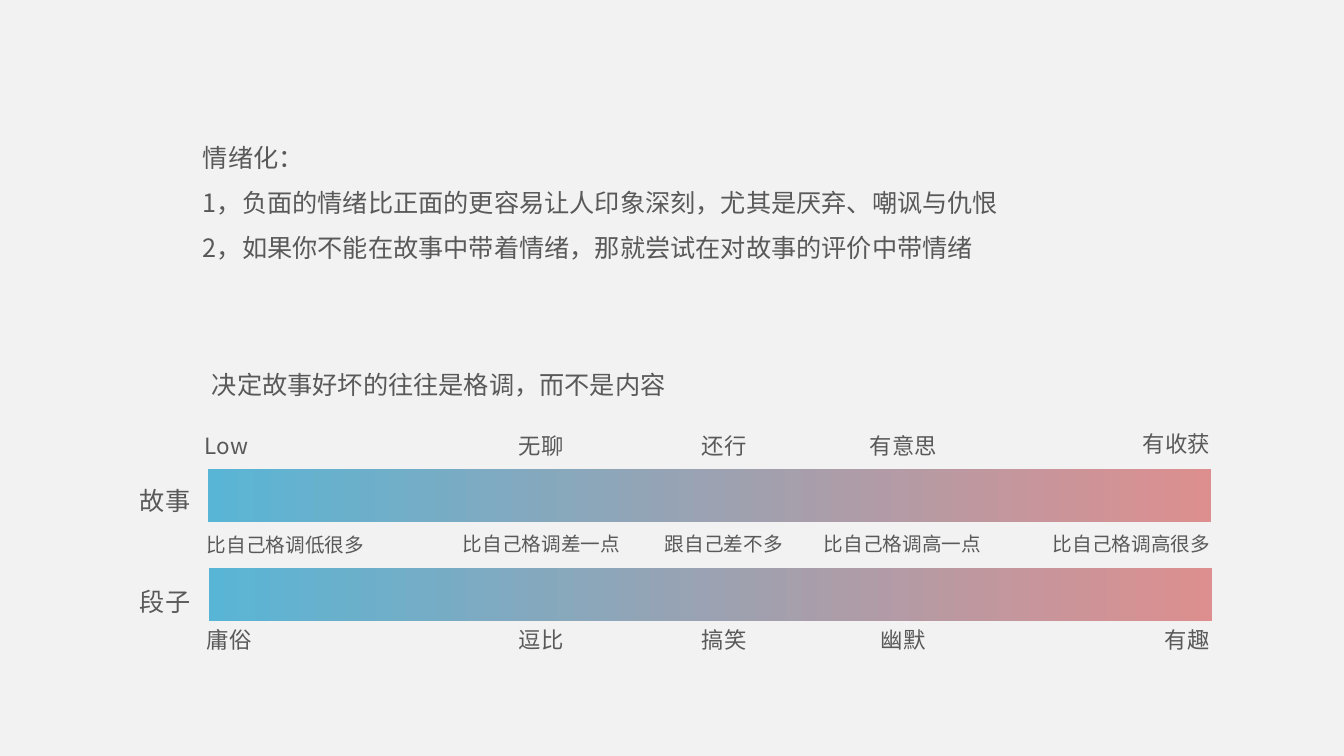
"""Slide on emotion in stories, with two gradient scales from low to high taste."""
from lxml import etree
from pptx import Presentation, util as u
from pptx.dml.color import RGBColor
from pptx.enum import shapes, text
from pptx.oxml import ns

PX = 914400 / 100.8
FONT = "Noto Sans CJK SC"
BACKGROUND = RGBColor(0xF2, 0xF2, 0xF2)
GREY = RGBColor(0x59, 0x59, 0x59)
BLUE = RGBColor(0x59, 0xB5, 0xD5)
RED = RGBColor(0xDD, 0x8F, 0x8F)


def px(*lengths):
    return [u.Emu(round(length * PX)) for length in lengths]


def add_text(lines, left, top, width, height, size=18, spacing=None):
    box = slide.shapes.add_textbox(*px(left, top, width, height))
    frame = box.text_frame
    frame.word_wrap = False
    frame.auto_size = text.MSO_AUTO_SIZE.SHAPE_TO_FIT_TEXT
    frame.text = lines
    for paragraph in frame.paragraphs:
        paragraph.line_spacing = spacing
        for run in paragraph.runs:
            run.font.size = u.Pt(size)
            run.font.color.rgb = GREY
            run.font.name = FONT
            properties = run.font._element
            etree.SubElement(properties, ns.qn("a:ea"), typeface=FONT)


presentation = Presentation()
presentation.slide_width, presentation.slide_height = px(1344, 756)
slide = presentation.slides.add_slide(presentation.slide_layouts[6])
slide.background.fill.solid()
slide.background.fill.fore_color.rgb = BACKGROUND

add_text(
    "情绪化：\n"
    "1，负面的情绪比正面的更容易让人印象深刻，尤其是厌弃、嘲讽与仇恨\n"
    "2，如果你不能在故事中带着情绪，那就尝试在对故事的评价中带情绪",
    193, 122, 851, 142, spacing=1.5)
add_text("决定故事好坏的往往是格调，而不是内容", 202, 349, 479, 50, spacing=1.5)

for name, left, top, name_top in [("故事", 208, 469, 465), ("段子", 209, 568, 566)]:
    bar = slide.shapes.add_shape(shapes.MSO_SHAPE.RECTANGLE, *px(left, top, 1003, 53))
    bar.shadow.inherit = False
    bar.line.fill.background()
    bar.fill.gradient()
    bar.fill.gradient_angle = 0
    for stop, color in zip(bar.fill.gradient_stops, (BLUE, RED)):
        stop.color.rgb = color
    add_text(name, 130, name_top, 72, 50, spacing=1.5)

story_labels = [("Low", 195, 427, 66), ("无聊", 509, 427, 66), ("还行", 692, 427, 66),
                ("有意思", 860, 427, 89), ("有收获", 1133, 425, 89)]
taste_labels = [("比自己格调低很多", 197, 528, 178), ("比自己格调差一点", 453, 527, 178),
                ("跟自己差不多", 655, 527, 139), ("比自己格调高一点", 814, 527, 178),
                ("比自己格调高很多", 1043, 527, 178)]
joke_labels = [("庸俗", 197, 621, 66), ("逗比", 509, 621, 66), ("搞笑", 692, 621, 66),
               ("幽默", 871, 621, 66), ("有趣", 1155, 621, 66)]
for labels, size, height in [(story_labels, 16, 37), (taste_labels, 14, 34), (joke_labels, 16, 37)]:
    for label, left, top, width in labels:
        add_text(label, left, top, width, height, size=size)

presentation.save("out.pptx")
